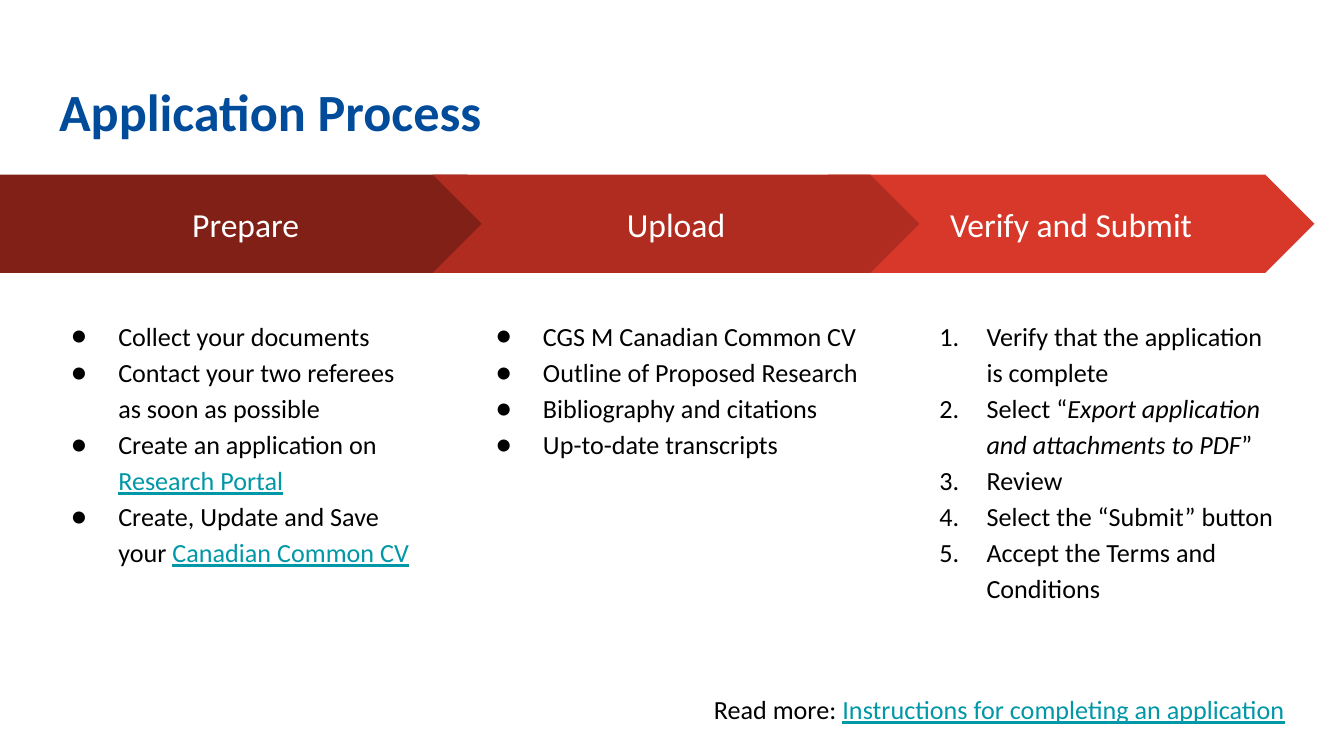
"""Build the Application Process slide: three arrow steps with a list under each."""
from lxml import etree
from pptx import Presentation
from pptx.dml.color import RGBColor
from pptx.enum import shapes, text
from pptx.oxml import ns
from pptx.util import Inches, Pt

BLUE = RGBColor(0x00, 0x4C, 0x9B)
TEAL = RGBColor(0x00, 0x97, 0xA7)
BLACK = RGBColor(0x00, 0x00, 0x00)
WHITE = RGBColor(0xFF, 0xFF, 0xFF)
DARK_RED = RGBColor(0x80, 0x20, 0x17)
MID_RED = RGBColor(0xB0, 0x2C, 0x20)
RED = RGBColor(0xD8, 0x38, 0x29)


def place(sp, left, top, width, height, anchor=text.MSO_ANCHOR.TOP):
    sp.left, sp.top = Inches(left), Inches(top)
    sp.width, sp.height = Inches(width), Inches(height)
    tf = sp.text_frame
    tf.word_wrap = True
    tf.auto_size = text.MSO_AUTO_SIZE.NONE
    tf.vertical_anchor = anchor
    tf.margin_left = tf.margin_right = tf.margin_top = tf.margin_bottom = Inches(0.1)
    return tf


def add_run(p, words, size, color, bold=False, italic=False, underline=False):
    r = p.add_run()
    r.text = words
    r.font.name = "Calibri"
    r.font.size = Pt(size)
    r.font.color.rgb = color
    r.font.bold, r.font.italic, r.font.underline = bold, italic, underline


prs = Presentation()
prs.slide_width = Inches(10)
prs.slide_height = Inches(10 * 9 / 16)
s = prs.slides.add_slide(prs.slide_layouts.get_by_name("Comparison"))
title, *bodies, footer = s.placeholders

p = place(title, 0.34, 0.49, 9.32, 0.63).paragraphs[0]
p.alignment = text.PP_ALIGN.LEFT
add_run(p, "Application Process", 28, BLUE, bold=True)

steps = [
    ("Verify and Submit", shapes.MSO_SHAPE.CHEVRON, 6.16, 3.62, RED),
    ("Prepare", shapes.MSO_SHAPE.PENTAGON, 0, 3.84, DARK_RED),
    ("Upload", shapes.MSO_SHAPE.CHEVRON, 3.22, 3.62, MID_RED),
]
for label, kind, left, width, color in steps:
    sp = s.shapes.add_shape(kind, 0, 0, 0, 0)
    p = place(sp, left, 1.3, width, 0.73, text.MSO_ANCHOR.MIDDLE).paragraphs[0]
    sp.adjustments[0] = 0.5
    sp.shadow.inherit = False
    sp.fill.solid()
    sp.fill.fore_color.rgb = color
    sp.line.fill.background()
    p.alignment = text.PP_ALIGN.CENTER
    add_run(p, label, 18, WHITE)

link = {"color": TEAL, "underline": True}
lists = [
    (0.28, 2.91, ("buChar", "char", "●"), [
        [("Collect your documents", {})],
        [("Contact your two referees as soon as possible", {})],
        [("Create an application on ", {}), ("Research Portal", link)],
        [("Create, Update and Save your ", {}), ("Canadian Common CV", link)],
    ]),
    (3.44, 3.19, ("buChar", "char", "●"), [
        [("CGS M Canadian Common CV", {})],
        [("Outline of Proposed Research", {})],
        [("Bibliography and citations", {})],
        [("Up-to-date transcripts", {})],
    ]),
    (6.74, 2.91, ("buAutoNum", "type", "arabicPeriod"), [
        [("Verify that the application is complete", {})],
        [("Select “", {}), ("Export application and attachments to PDF", {"italic": True}), ("”", {})],
        [("Review", {})],
        [("Select the “Submit” button", {})],
        [("Accept the Terms and Conditions", {})],
    ]),
]
for body, (left, width, (tag, key, mark), items) in zip(bodies, lists):
    tf = place(body, left, 2.25, width, 2.86)
    for i, runs in enumerate(items):
        p = tf.add_paragraph() if i else tf.paragraphs[0]
        pPr = p._p.get_or_add_pPr()
        pPr.set("marL", str(Inches(0.5)))
        pPr.set("indent", str(Inches(-0.35)))
        clr = etree.SubElement(pPr, ns.qn("a:buClr"))
        etree.SubElement(clr, ns.qn("a:srgbClr")).set("val", str(BLACK))
        etree.SubElement(pPr, ns.qn("a:buFont")).set("typeface", "Calibri")
        etree.SubElement(pPr, ns.qn(f"a:{tag}")).set(key, mark)
        p.line_spacing = 1.15
        p.space_before = Pt(0)
        for words, style in runs:
            add_run(p, words, 14, **{"color": BLACK, **style})

p = place(footer, 4.84, 5.06, 4.82, 0.75).paragraphs[0]
pPr = p._p.get_or_add_pPr()
pPr.set("marL", "0")
pPr.set("indent", "0")
etree.SubElement(pPr, ns.qn("a:buNone"))
p.alignment = text.PP_ALIGN.RIGHT
p.space_before = Pt(0)
add_run(p, "Read more: ", 14, BLACK)
add_run(p, "Instructions for completing an application", 14, **link)

prs.save("out.pptx")
